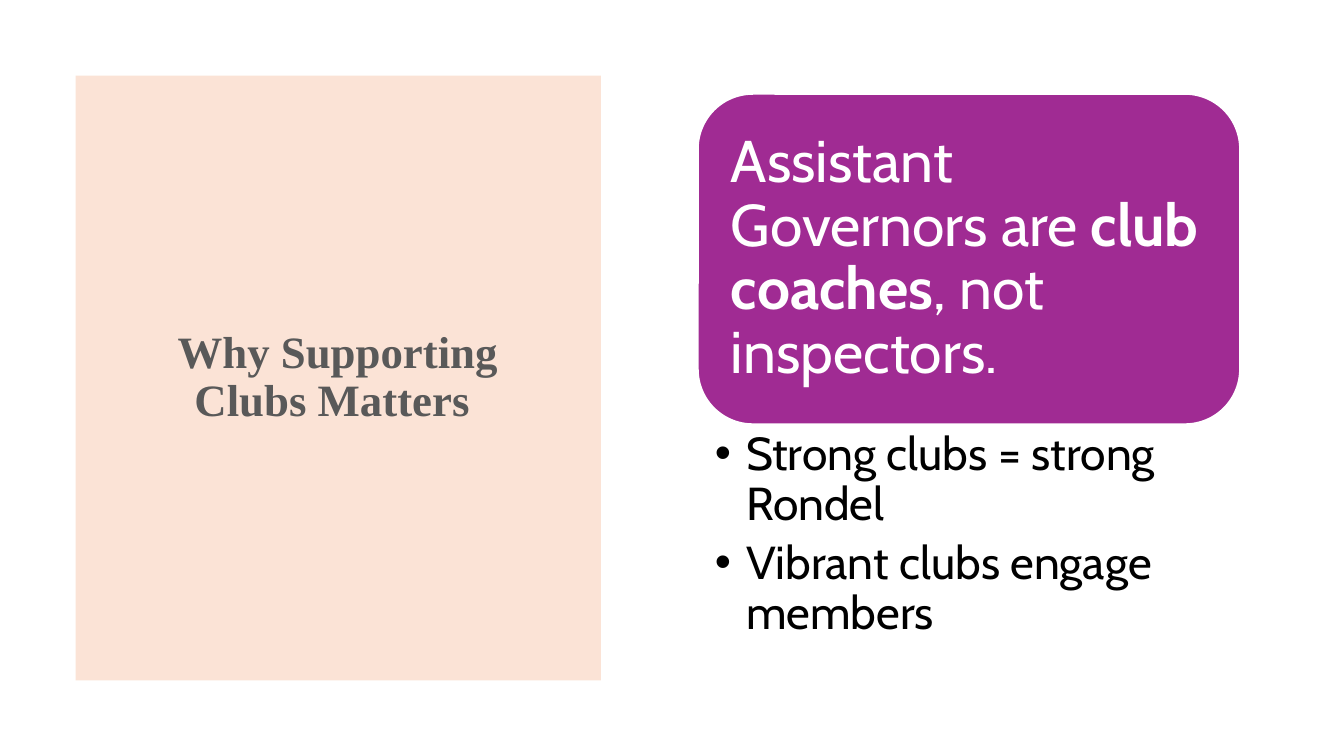
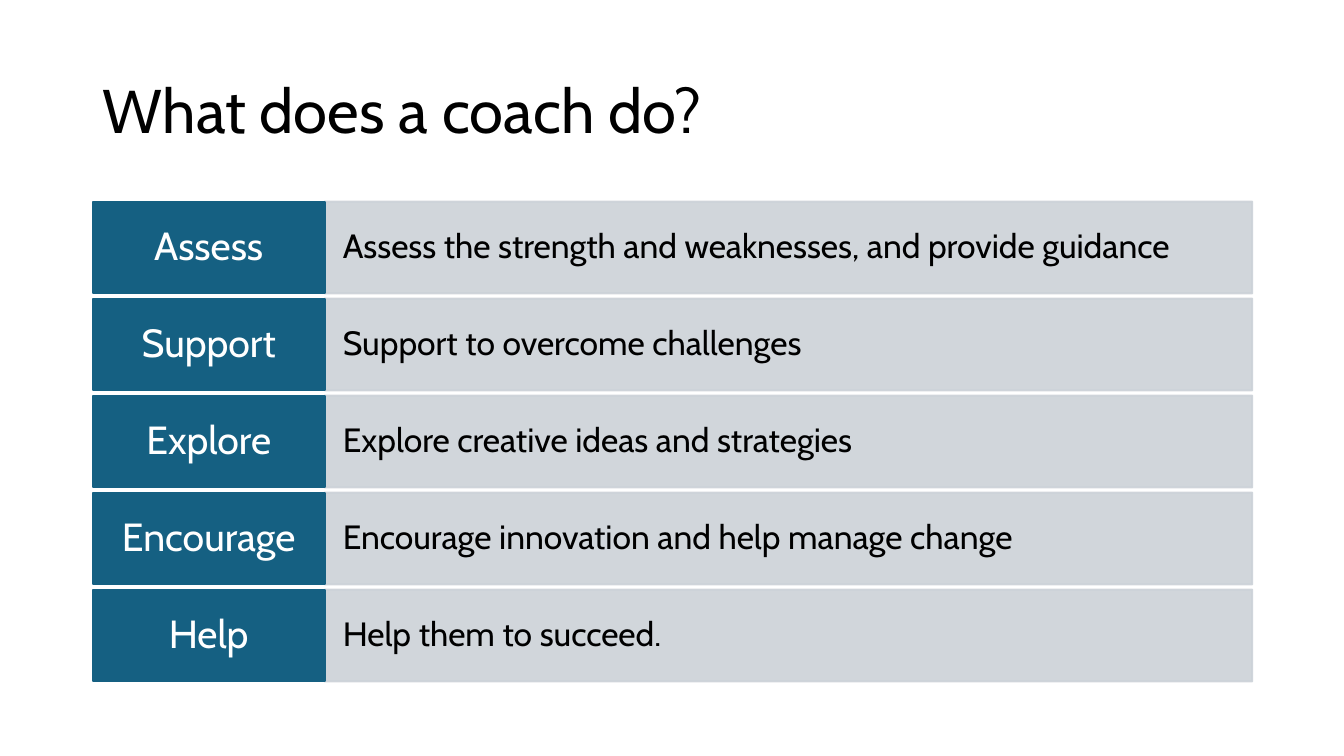
from dataclasses import dataclass

from lxml.etree import SubElement
from pptx import Presentation
from pptx.dml.color import RGBColor
from pptx.enum.shapes import MSO_SHAPE
from pptx.enum.text import MSO_ANCHOR, MSO_AUTO_SIZE, PP_ALIGN
from pptx.oxml.ns import qn
from pptx.util import Inches, Pt


@dataclass(frozen=True)
class Theme:
    black: RGBColor = RGBColor.from_string("000000")
    white: RGBColor = RGBColor.from_string("FFFFFF")
    grey_text: RGBColor = RGBColor.from_string("595959")
    peach: RGBColor = RGBColor.from_string("FBE3D6")
    purple: RGBColor = RGBColor.from_string("A02B93")
    blue: RGBColor = RGBColor.from_string("156082")
    pale_grey: RGBColor = RGBColor.from_string("CCD2D8")
    font: str = "Cabin"
    serif: str = "Times New Roman"
    title: Pt = Pt(44)
    panel_title: Pt = Pt(32)
    message: Pt = Pt(42)
    bullet: Pt = Pt(33)
    label: Pt = Pt(28)
    detail: Pt = Pt(24)
    outline: Pt = Pt(1.5)
    line_spacing: float = 0.9


theme = Theme()


def add_block(slide, kind, box, fill, line=None):
    shape = slide.shapes.add_shape(kind, *map(Inches, box))
    shape.shadow.inherit = False
    shape.fill.solid()
    shape.fill.fore_color.rgb = fill
    if line is None:
        shape.line.fill.background()
    else:
        shape.line.color.rgb = line
        shape.line.width = theme.outline
    return shape


def style_text(shape, size, color, insets=(0.1, 0.05), alignment=PP_ALIGN.LEFT,
               anchor=MSO_ANCHOR.MIDDLE, font=theme.font, bold=False):
    frame = shape.text_frame
    frame.word_wrap = True
    frame.auto_size = MSO_AUTO_SIZE.NONE
    frame.vertical_anchor = anchor
    frame.margin_left = frame.margin_right = Inches(insets[0])
    frame.margin_top = frame.margin_bottom = Inches(insets[1])
    for paragraph in frame.paragraphs:
        paragraph.alignment = alignment
        paragraph.line_spacing = theme.line_spacing
        paragraph.space_before = Pt(0)
        paragraph.font.name = font
        paragraph.font.size = size
        paragraph.font.bold = bold
        paragraph.font.color.rgb = color


presentation = Presentation()
presentation.slide_width = Inches(13.33)
presentation.slide_height = Inches(7.5)
content_layout = presentation.slide_layouts[1]
title_layout = presentation.slide_layouts[5]

slide = presentation.slides.add_slide(content_layout)
title = slide.shapes.title
title.left, title.top, title.width, title.height = map(Inches, (1.38, 1.6, 3.94, 4.3))
title.text_frame.text = "Why Supporting Clubs Matters "
style_text(title, theme.panel_title, theme.grey_text, alignment=PP_ALIGN.CENTER,
           font=theme.serif, bold=True)
panel = add_block(slide, MSO_SHAPE.RECTANGLE, (0.75, 0.75, 5.21, 6), theme.peach)
title.element.addprevious(panel.element)

message = add_block(slide, MSO_SHAPE.ROUNDED_RECTANGLE, (6.92, 0.93, 5.38, 3.28),
                    theme.purple, theme.white)
message_paragraph = message.text_frame.paragraphs[0]
for text in ("Assistant Governors are ", "club coaches", ", not inspectors."):
    run = message_paragraph.add_run()
    run.text = text
    if text == "club coaches":
        run.font.bold = True
style_text(message, theme.message, theme.white, insets=(0.17, 0.17))

body = slide.placeholders[1]
body.left, body.top, body.width, body.height = map(Inches, (6.92, 4.21, 5.38, 2.28))
body.text_frame.text = "Strong clubs = strong Rondel\nVibrant clubs engage members"
for paragraph in body.text_frame.paragraphs:
    properties = paragraph._p.get_or_add_pPr()
    properties.set("marL", str(Inches(0.31)))
    properties.set("indent", str(Inches(-0.31)))
    SubElement(properties, qn("a:buChar")).set("char", "•")
    paragraph.space_after = Pt(6.6)
style_text(body, theme.bullet, theme.black, insets=(0.17, 0.06), anchor=MSO_ANCHOR.TOP)
body.text_frame.margin_right = Inches(0.33)

slide = presentation.slides.add_slide(title_layout)
title = slide.shapes.title
title.left, title.top, title.width, title.height = map(Inches, (0.92, 0.4, 11.5, 1.45))
title.text_frame.text = "What does a coach do?"
style_text(title, theme.title, theme.black)

coach_tasks = (
    ("Assess", "Assess the strength and weaknesses, and provide guidance"),
    ("Support", "Support to overcome challenges"),
    ("Explore", "Explore creative ideas and strategies"),
    ("Encourage", "Encourage innovation and help manage change"),
    ("Help", "Help them to succeed."),
)
left, first_top, last_top = 0.92, 2, 5.85
label_width, detail_width, row_height = 2.3, 9.2, 0.91
row_step = (last_top - first_top) / (len(coach_tasks) - 1)

for row, (label_text, detail_text) in enumerate(coach_tasks):
    top = first_top + row * row_step
    detail = add_block(slide, MSO_SHAPE.RECTANGLE,
                       (left + label_width, top, detail_width, row_height),
                       theme.pale_grey, theme.pale_grey)
    for color in detail.element.spPr.iter(qn("a:srgbClr")):
        SubElement(color, qn("a:alpha")).set("val", "90000")
    detail.text_frame.text = detail_text
    style_text(detail, theme.detail, theme.black, insets=(0.18, 0.23))

    label = add_block(slide, MSO_SHAPE.RECTANGLE, (left, top, label_width, row_height),
                      theme.blue, theme.blue)
    label.text_frame.text = label_text
    style_text(label, theme.label, theme.white, insets=(0.12, 0.09),
               alignment=PP_ALIGN.CENTER)

presentation.save("out.pptx")
